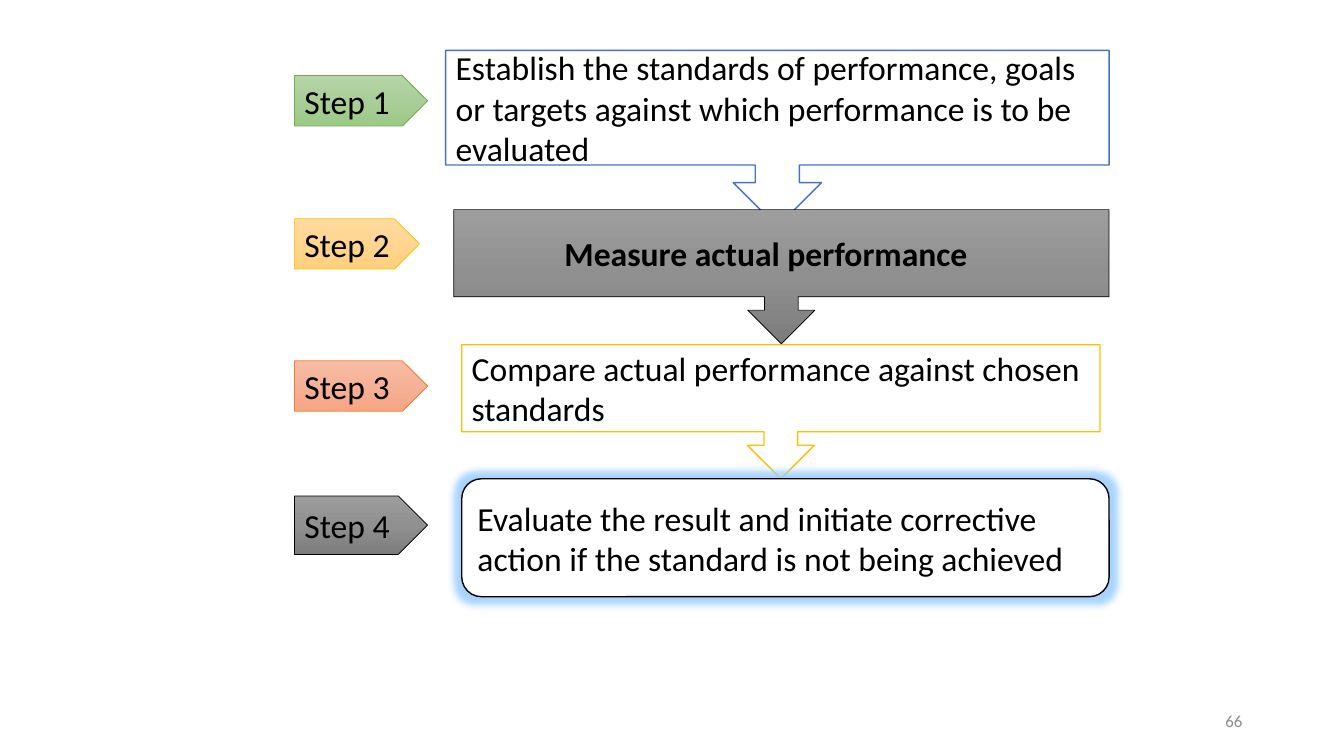
import copy

import pptx
import pptx.dml.color
import pptx.enum.shapes
import pptx.enum.text
import pptx.oxml
import pptx.oxml.ns
import pptx.util

PX = 9144
SHAPE = pptx.enum.shapes.MSO_SHAPE
ALIGN = pptx.enum.text.PP_ALIGN
THEME = {
    "font": "Calibri", "body": 24, "small": 12,
    "text": "000000", "muted": "8C8C8C", "white": "FFFFFF",
    "blue": "4472C4", "gold": "FFC000", "green": "70AD47", "orange": "ED7D31", "black": "000000",
    "glow": "99CCFF",
    "gray_shades": ("9D9D9D", "909090", "7C7C7C"),
    "gold_shades": ("FFDB9E", "FFD590", "FFD07C"),
    "green_shades": ("B5D5A7", "AACE9A", "9CC987"),
    "orange_shades": ("F7BDA5", "F5B196", "F8A582"),
}


def rgb(name):
    return pptx.dml.color.RGBColor.from_string(THEME[name])


def write_text(box, text, size="body", color="text", bold=False, align=ALIGN.LEFT, indent=0):
    frame = box.text_frame
    frame.word_wrap = True
    frame.vertical_anchor = pptx.enum.text.MSO_ANCHOR.MIDDLE
    para = frame.paragraphs[0]
    para.alignment = align
    if indent:
        para.level = 2
        properties = para._p.get_or_add_pPr()
        properties.set("marL", str(indent * PX))
        properties.set("indent", "0")
    span = para.add_run()
    span.text = text
    span.font.name = THEME["font"]
    span.font.size = pptx.util.Pt(THEME[size])
    span.font.bold = bold
    span.font.color.rgb = rgb(color)


deck = pptx.Presentation()
deck.slide_width, deck.slide_height = 1333 * PX, 750 * PX
page = deck.slides.add_slide(deck.slide_layouts[6])

number = page.shapes.add_textbox(942 * PX, 695 * PX, 300 * PX, 40 * PX)
write_text(number, "66", size="small", color="muted", align=ALIGN.RIGHT)

callout, tag, rounded = SHAPE.DOWN_ARROW_CALLOUT, SHAPE.PENTAGON, SHAPE.FLOWCHART_ALTERNATE_PROCESS
flow = [
    (callout, (442, 50, 658, 175), "white", "blue", 1, {},
     "Establish the standards of performance, goals or targets against which performance is to be evaluated"),
    (callout, (450, 208, 650, 133), "gray_shades", "black", 0.5, {"bold": True, "indent": 100},
     "Measure actual performance"),
    (callout, (458, 342, 633, 133), "white", "gold", 1, {},
     "Compare actual performance against chosen standards"),
    (tag, (292, 75, 132, 50), "green_shades", "green", 0.5, {}, "Step 1"),
    (tag, (292, 217, 124, 50), "gold_shades", "gold", 0.5, {}, "Step 2"),
    (tag, (292, 358, 132, 50), "orange_shades", "orange", 0.5, {}, "Step 3"),
    (tag, (292, 492, 132, 58), "gray_shades", "black", 0.5, {}, "Step 4"),
    (rounded, (458, 475, 642, 117), "white", "black", 1, {},
     "Evaluate the result and initiate corrective action if the standard is not being achieved"),
]
for kind, place, fill, line, width, style, text in flow:
    box = page.shapes.add_shape(kind, *(length * PX for length in place))
    box.shadow.inherit = False
    box.line.color.rgb = rgb(line)
    box.line.width = pptx.util.Pt(width)
    if fill.endswith("shades"):
        box.fill.gradient()
        box.fill.gradient_angle = 270
        stop_list = box._element.spPr.find(".//" + pptx.oxml.ns.qn("a:gsLst"))
        stop_list.insert(1, copy.deepcopy(stop_list[0]))
        for index, stop in enumerate(box.fill.gradient_stops):
            stop.position = index / 2
            stop.color.rgb = pptx.dml.color.RGBColor.from_string(THEME[fill][index])
    else:
        box.fill.solid()
        box.fill.fore_color.rgb = rgb(fill)
    if kind == rounded:
        effects = box._element.spPr.find(pptx.oxml.ns.qn("a:effectLst"))
        effects.append(pptx.oxml.parse_xml(
            f'<a:glow {pptx.oxml.ns.nsdecls("a")} rad="{14 * PX}"><a:srgbClr val="{THEME["glow"]}">'
            '<a:alpha val="85000"/></a:srgbClr></a:glow>'))
    write_text(box, text, **style)

deck.save("out.pptx")
